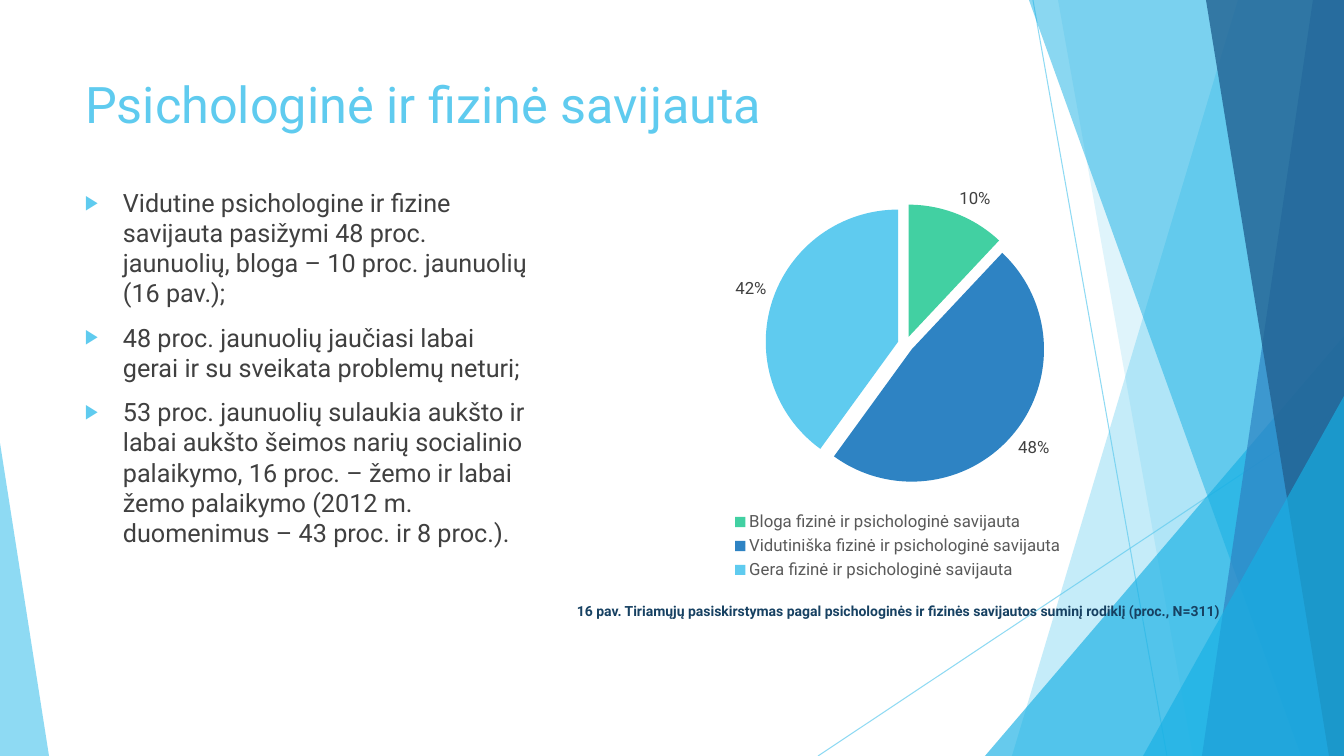
from lxml import etree
from pptx import Presentation
from pptx import util as u
from pptx.chart.data import CategoryChartData
from pptx.dml.color import RGBColor
from pptx.enum import chart as charts, shapes, text
from pptx.oxml.ns import qn

PX = 914400 / 100.8
WIDTH, HEIGHT = 1344, 756
FONT = "Roboto"
COLORS = {
    "sky": "5FCBEF", "cyan": "17B0E4", "blue": "2E83C3", "deep": "226292",
    "green": "42D0A2", "navy": "174162", "body": "404040", "legend": "595959",
}
POINTS = [
    "Vidutine psichologine ir fizine savijauta pasižymi 48 proc. jaunuolių, bloga – 10 proc. jaunuolių (16 pav.);",
    "48 proc. jaunuolių jaučiasi labai gerai ir su sveikata problemų neturi;",
    "53 proc. jaunuolių sulaukia aukšto ir labai aukšto šeimos narių socialinio palaikymo, 16 proc. – žemo ir labai žemo palaikymo (2012 m. duomenimus – 43 proc. ir 8 proc.).",
]
WELLBEING = [
    ("Bloga fizinė ir psichologinė savijauta", 12, "10%", "green"),
    ("Vidutiniška fizinė ir psichologinė savijauta", 48, "48%", "blue"),
    ("Gera fizinė ir psichologinė savijauta", 40, "42%", "sky"),
]


def px(*lengths):
    return [u.Emu(round(length * PX)) for length in lengths]


def rgb(color):
    return RGBColor.from_string(COLORS[color])


def add(parent, tag, **attributes):
    return etree.SubElement(parent, qn(tag), attributes)


def format_font(font, size, color, bold=False):
    font.name, font.size, font.bold = FONT, u.Pt(size), bold
    font.color.rgb = rgb(color)


def write(paragraph, wording, size, color, bold=False, align=text.PP_ALIGN.LEFT):
    run = paragraph.add_run()
    run.text = wording
    format_font(run.font, size, color, bold)
    paragraph.alignment = align


def tint(fill, properties, color, opacity):
    fill.solid()
    fill.fore_color.rgb = rgb(color)
    for shade in properties.findall(qn("a:solidFill") + "/" + qn("a:srgbClr")):
        add(shade, "a:alpha", val=str(opacity * 1000))


def finish_facet(facet, color, opacity):
    facet.shadow.inherit = False
    tint(facet.fill, facet.element.spPr, color, opacity)
    facet.line.fill.background()


def add_ray(slide, start, end):
    ray = slide.shapes.add_connector(shapes.MSO_CONNECTOR.STRAIGHT, *px(*start, *end))
    ray.line.width = u.Pt(0.75)
    tint(ray.line.fill, ray.line._get_or_add_ln(), "sky", 70)
    add(ray.element.spPr, "a:effectLst")


def add_band(slide, top, bottom, color, opacity):
    outline = slide.shapes.build_freeform(top, 0, scale=PX)
    outline.add_line_segments([(WIDTH, 0), (WIDTH, HEIGHT), (bottom, HEIGHT)])
    finish_facet(outline.convert_to_shape(), color, opacity)


def add_corner(slide, left, top, width, apex, color, opacity):
    corner = slide.shapes.add_shape(
        shapes.MSO_SHAPE.ISOSCELES_TRIANGLE, *px(left, top, width, HEIGHT - top))
    corner.adjustments[0] = apex
    finish_facet(corner, color, opacity)


def add_facets(slide):
    add_ray(slide, (1033, 0), (1167, HEIGHT))
    add_ray(slide, (WIDTH, 406), (818, HEIGHT))
    add_band(slide, 1238, 1012, "sky", 36)
    add_band(slide, 1058, 1193, "sky", 20)
    add_corner(slide, 985, 336, 359, 1, "cyan", 66)
    add_band(slide, 1029, 1301, "cyan", 50)
    add_band(slide, 1313, 1202, "blue", 70)
    add_band(slide, 1206, 1329, "deep", 80)
    add_corner(slide, 1143, 396, 201, 1, "cyan", 66)
    add_corner(slide, 0, 443, 49, 0, "sky", 70)


def add_title(slide, box):
    title = slide.shapes.title
    title.left, title.top, title.width, title.height = px(*box)
    frame = title.text_frame
    frame.auto_size = text.MSO_AUTO_SIZE.NONE
    frame.vertical_anchor = text.MSO_ANCHOR.TOP
    write(frame.paragraphs[0], "Psichologinė ir fizinė savijauta", 36, "sky")
    slide.shapes.element.append(title.element)


def add_frame(slide, box):
    frame = slide.shapes.add_textbox(*px(*box)).text_frame
    frame.word_wrap = True
    return frame


def add_points(slide, box):
    frame = add_frame(slide, box)
    indent = px(38)[0]
    for number, point in enumerate(POINTS):
        paragraph = frame.add_paragraph() if number else frame.paragraphs[0]
        paragraph.space_before = u.Pt(10)
        write(paragraph, point, 18, "body")
        properties = paragraph._p.get_or_add_pPr()
        properties.set("marL", str(indent))
        properties.set("indent", str(-indent))
        add(add(properties, "a:buClr"), "a:srgbClr", val=COLORS["sky"])
        add(properties, "a:buSzPct", val="80000")
        add(properties, "a:buFont", typeface="Arial")
        add(properties, "a:buChar", char="▶")


def place_plot(chart, **shares):
    area = chart.element.chart.plotArea
    for layout in area.findall(qn("c:layout")):
        area.remove(layout)
    layout = etree.Element(qn("c:layout"))
    area.insert(0, layout)
    manual = add(layout, "c:manualLayout")
    add(manual, "c:layoutTarget", val="inner")
    for mode in ("xMode", "yMode"):
        add(manual, f"c:{mode}", val="edge")
    for side, share in shares.items():
        add(manual, f"c:{side}", val=str(share))


def add_wellbeing_pie(slide, box):
    data = CategoryChartData(number_format="0")
    data.categories = [name for name, *_ in WELLBEING]
    data.add_series("Series 1", [value for _, value, *_ in WELLBEING])
    chart = slide.shapes.add_chart(charts.XL_CHART_TYPE.PIE, *px(*box), data).chart
    chart.has_title = False
    format_font(chart.font, 10, "body")
    chart.has_legend = True
    chart.legend.position = charts.XL_LEGEND_POSITION.BOTTOM
    chart.legend.include_in_layout = False
    format_font(chart.legend.font, 12, "legend")
    plot = chart.plots[0]
    plot.vary_by_categories = True
    series = plot.series[0]
    for number, (_, _, share, color) in enumerate(WELLBEING):
        slice_ = series.points[number]
        slice_.format.fill.solid()
        slice_.format.fill.fore_color.rgb = rgb(color)
        label = slice_.data_label
        write(label.text_frame.paragraphs[0], share, 12, "body")
        label.position = charts.XL_LABEL_POSITION.OUTSIDE_END
    labels = series.data_labels
    labels.show_value = True
    labels.position = charts.XL_LABEL_POSITION.OUTSIDE_END
    format_font(labels.font, 12, "body")
    explosion = etree.Element(qn("c:explosion"), val="6")
    series._element.find(qn("c:dPt")).addprevious(explosion)
    place_plot(chart, x=0.24, y=0.08, w=0.55, h=0.68)


def add_caption(slide, box):
    write(add_frame(slide, box).paragraphs[0],
          "16 pav. Tiriamųjų pasiskirstymas pagal psichologinės ir fizinės savijautos suminį rodiklį (proc., N=311)",
          10, "navy", bold=True, align=text.PP_ALIGN.CENTER)


def main():
    deck = Presentation()
    deck.slide_width, deck.slide_height = px(WIDTH, HEIGHT)
    slide = deck.slides.add_slide(deck.slide_layouts[5])
    add_facets(slide)
    add_title(slide, (75, 68, 948, 145))
    add_points(slide, (75, 182, 462, 483))
    add_caption(slide, (562, 598, 672, 44))
    add_wellbeing_pie(slide, (643, 171, 510, 413))
    deck.save("out.pptx")


if __name__ == "__main__":
    main()
